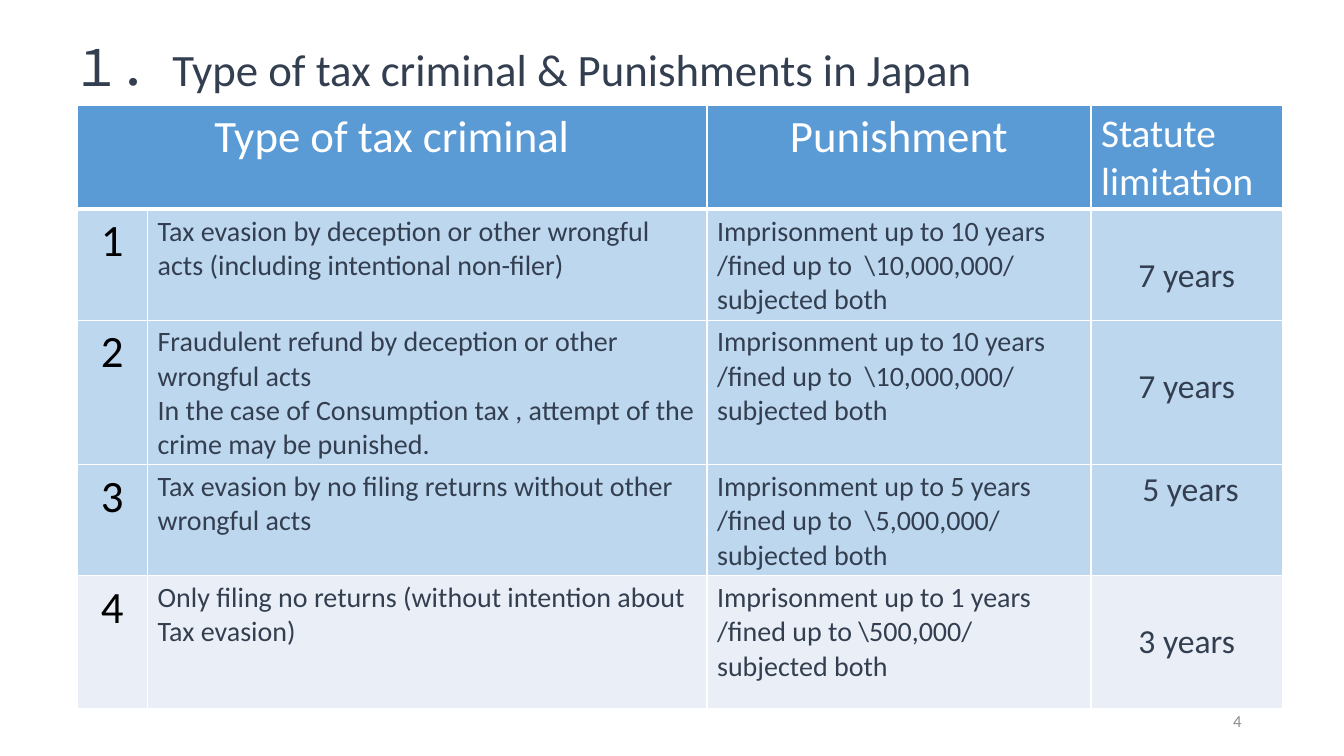
from dataclasses import dataclass

from lxml.etree import SubElement
from pptx import Presentation
from pptx.dml.color import RGBColor as RGB
from pptx.enum.text import MSO_ANCHOR as Anchor, PP_ALIGN as Align
from pptx.oxml.ns import qn
from pptx.util import Pt


@dataclass(frozen=True)
class Theme:
    font: str = "Calibri"
    ink: str = "333F50"
    number: str = "000000"
    white: str = "FFFFFF"
    muted: str = "8C8C8C"
    header: str = "5B9BD5"
    band: str = "BDD7EE"
    pale: str = "EAEFF7"
    title_number: int = 36
    large: int = 32
    medium: int = 28
    years: int = 24
    body: int = 20
    small: int = 12


T = Theme()
COLS = [50.4, 399.6, 274.3, 136.8]
ROWS = [74, 79, 103, 79, 95]
HEADINGS = [
    (0, "Type of tax criminal", T.large, Align.CENTER),
    (2, "Punishment", T.large, Align.CENTER),
    (3, "Statute limitation", T.medium, Align.LEFT),
]
PENALTY = "Imprisonment up to {} years /fined up to {}/ subjected both"
CRIMES = [
    (["Tax evasion by deception or other wrongful acts (including intentional non-filer)"],
     PENALTY.format(10, " \\10,000,000"), "7 years", 33, T.band),
    (["Fraudulent refund by deception or other wrongful acts",
      "In the case of Consumption tax , attempt of the crime may be punished."],
     PENALTY.format(10, " \\10,000,000"), "7 years", 33, T.band),
    (["Tax evasion by no filing returns without other wrongful acts"],
     PENALTY.format(5, " \\5,000,000"), " 5 years", 3.6, T.band),
    (["Only filing no returns (without intention about Tax evasion)"],
     PENALTY.format(1, "\\500,000"), "3 years", 33, T.pale),
]


def add_run(p, text, size, color):
    r = p.add_run()
    r.text = text
    r.font.name = T.font
    r.font.size = Pt(size)
    r.font.bold = False
    r.font.color.rgb = RGB.from_string(color)


def add_box(s, x, y, w, h):
    tf = s.shapes.add_textbox(Pt(x), Pt(y), Pt(w), Pt(h)).text_frame
    tf.word_wrap = True
    tf.vertical_anchor = Anchor.MIDDLE
    return tf.paragraphs[0]


def add_title(s, x, y, w, h):
    p = add_box(s, x, y, w, h)
    p.line_spacing = 0.9
    add_run(p, "１．", T.title_number, T.ink)
    add_run(p, "Type of tax criminal & Punishments in Japan", T.large, T.ink)


def add_page_number(s, x, y, w, h):
    p = add_box(s, x, y, w, h)
    p.alignment = Align.RIGHT
    add_run(p, "4", T.small, T.muted)


def style_cell(cell, fill, bottom=1):
    tcPr = cell._tc.get_or_add_tcPr()
    for side, width in (("L", 1), ("R", 1), ("T", 1), ("B", bottom)):
        ln = SubElement(tcPr, qn(f"a:ln{side}"), w=str(Pt(width)))
        SubElement(SubElement(ln, qn("a:solidFill")), qn("a:srgbClr"), val=T.white)
    cell.fill.solid()
    cell.fill.fore_color.rgb = RGB.from_string(fill)


def write_cell(cell, lines, size, color, align=Align.LEFT):
    tf = cell.text_frame
    for i, line in enumerate(lines):
        p = tf.add_paragraph() if i else tf.paragraphs[0]
        p.alignment = align
        add_run(p, line, size, color)


def add_crime_table(s, x, y, w, h):
    table = s.shapes.add_table(len(ROWS), len(COLS), Pt(x), Pt(y), Pt(w), Pt(h)).table
    table.horz_banding = False
    for col, width in zip(table.columns, COLS):
        col.width = Pt(w * width / sum(COLS))
    for row, height in zip(table.rows, ROWS):
        row.height = Pt(h * height / sum(ROWS))

    table.cell(0, 0).merge(table.cell(0, 1))
    for cell in table.rows[0].cells:
        style_cell(cell, T.header, bottom=3)
    for col, text, size, align in HEADINGS:
        write_cell(table.cell(0, col), [text], size, T.white, align)

    for i, (crime, penalty, years, top, fill) in enumerate(CRIMES, 1):
        cells = list(table.rows[i].cells)
        for cell in cells:
            style_cell(cell, fill)
        write_cell(cells[0], [str(i)], T.large, T.number, Align.CENTER)
        write_cell(cells[1], crime, T.body, T.ink)
        write_cell(cells[2], [penalty], T.body, T.ink)
        write_cell(cells[3], [years], T.years, T.ink, Align.CENTER)
        cells[3].margin_top = Pt(top)


def main():
    prs = Presentation()
    prs.slide_width, prs.slide_height = Pt(960), Pt(540)
    s = prs.slides.add_slide(prs.slide_layouts[6])
    add_title(s, 44, 16, 752, 68)
    add_crime_table(s, 55, 75, sum(COLS), sum(ROWS))
    add_page_number(s, 678, 500, 216, 29)
    prs.save("out.pptx")


if __name__ == "__main__":
    main()
